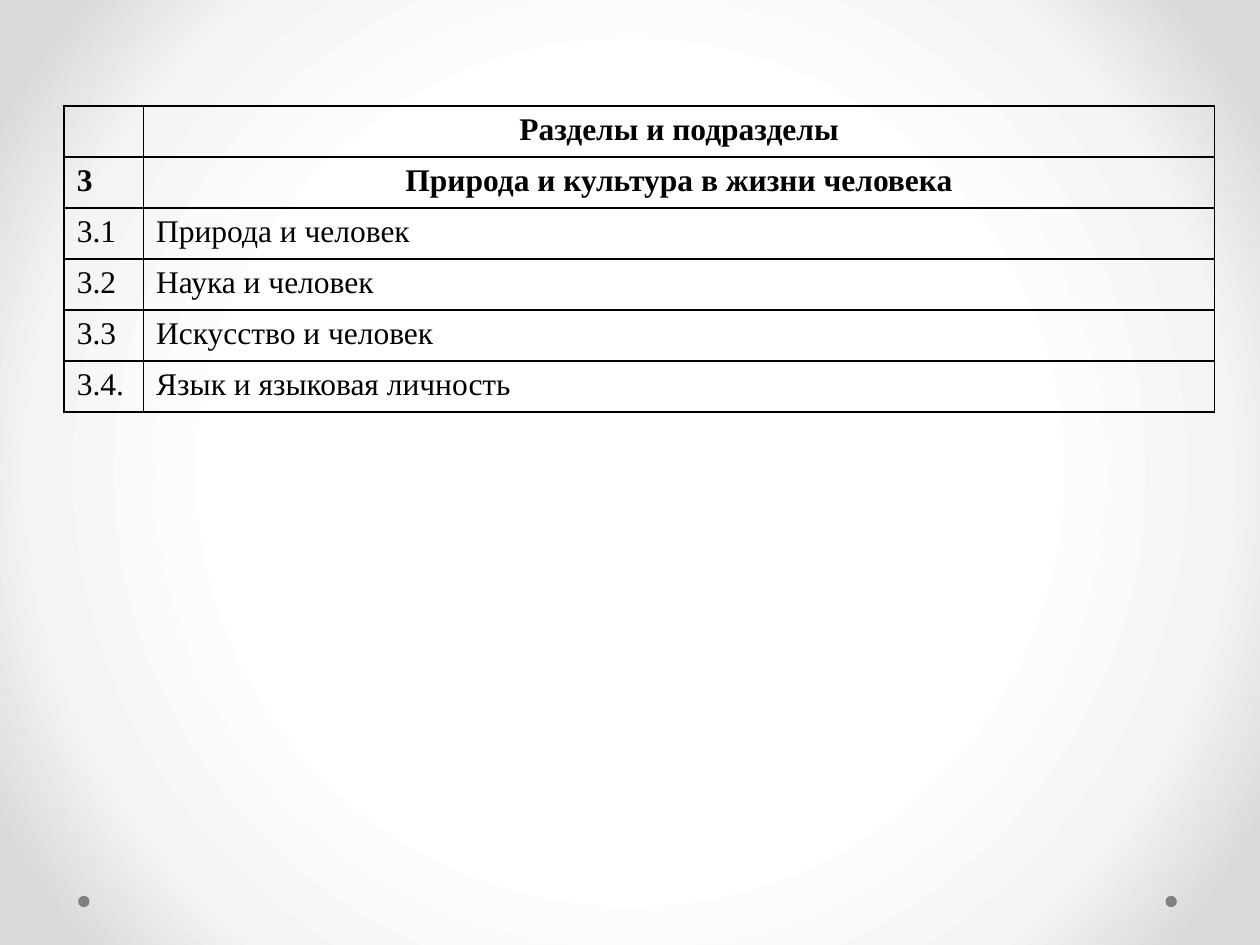
from lxml import etree
from pptx import Presentation
from pptx.dml.color import RGBColor
from pptx.enum.shapes import MSO_SHAPE
from pptx.enum.text import PP_ALIGN
from pptx.oxml import parse_xml
from pptx.oxml.ns import nsdecls, qn
from pptx.util import Inches, Pt

OVAL = MSO_SHAPE.OVAL
LEFT, CENTER = PP_ALIGN.LEFT, PP_ALIGN.CENTER

COLORS = {"ink": "000000", "dot": "808080", "center": "FFFFFF", "ring": "F4F4F4", "edge": "DADADA"}
GRADIENT = [(50, "center"), (76, "ring"), (92, "edge")]
WIDTH, HEIGHT = Inches(10), Inches(7.5)
SECTIONS = [
    ("", "Разделы и подразделы"),
    ("3", "Природа и культура в жизни человека"),
    ("3.1", "Природа и человек"),
    ("3.2", "Наука и человек"),
    ("3.3", "Искусство и человек"),
    ("3.4.", "Язык и языковая личность"),
]
HEADING_ROWS = 2
NUMBER_SHARE = 0.069
FONT = {"name": "Times New Roman", "size": Pt(18)}
TABLE_FLAGS = {"first_row": False, "horz_banding": False}


def paint_background(slide):
    """Fill the slide with a round gradient that darkens towards the corners."""
    stops = "".join(
        f'<a:gs pos="{share * 1000}"><a:srgbClr val="{COLORS[key]}"/></a:gs>'
        for share, key in GRADIENT
    )
    background = parse_xml(
        f'<p:bg {nsdecls("p", "a")}><p:bgPr><a:gradFill rotWithShape="1">'
        f'<a:gsLst>{stops}</a:gsLst><a:path path="circle">'
        '<a:fillToRect l="50000" t="50000" r="50000" b="50000"/></a:path>'
        "</a:gradFill><a:effectLst/></p:bgPr></p:bg>"
    )
    slide.element.cSld.insert(0, background)


def add_footer_dots(slide, left, top, width, size):
    """Place one dot at each end of the footer box."""
    for dot_left in (left, left + width - size):
        dot = slide.shapes.add_shape(OVAL, dot_left, top, size, size)
        dot.shadow.inherit = False
        dot.fill.solid()
        dot.fill.fore_color.rgb = RGBColor.from_string(COLORS["dot"])
        dot.line.fill.background()


def outline_cell(cell):
    """Draw a thin line on all four sides of a cell."""
    properties = cell._tc.get_or_add_tcPr()
    for position, side in enumerate(("lnL", "lnR", "lnT", "lnB")):
        border = etree.Element(qn(f"a:{side}"), w=str(Pt(1)))
        fill = etree.SubElement(border, qn("a:solidFill"))
        etree.SubElement(fill, qn("a:srgbClr"), val=COLORS["ink"])
        properties.insert(position, border)


def write_cell(cell, text, bold, alignment):
    """Write and format the text of one unfilled, outlined cell."""
    cell.fill.background()
    outline_cell(cell)
    cell.text = text
    paragraph = cell.text_frame.paragraphs[0]
    paragraph.alignment = alignment
    for run in paragraph.runs:
        for attribute, value in {**FONT, "bold": bold}.items():
            setattr(run.font, attribute, value)
        run.font.color.rgb = RGBColor.from_string(COLORS["ink"])


def add_sections_table(slide, left, top, width, height):
    """Fill the box with the numbered list of sections."""
    frame = slide.shapes.add_table(len(SECTIONS), 2, left, top, width, height)
    table = frame.table
    for attribute, value in TABLE_FLAGS.items():
        setattr(table, attribute, value)
    number_width = int(width * NUMBER_SHARE)
    table.columns[0].width = number_width
    table.columns[1].width = width - number_width
    for row, (number, title) in enumerate(SECTIONS):
        heading = row < HEADING_ROWS
        write_cell(table.cell(row, 0), number, heading, LEFT)
        write_cell(table.cell(row, 1), title, heading, CENTER if heading else LEFT)


def main():
    """Build the slide and save it."""
    presentation = Presentation()
    presentation.slide_width, presentation.slide_height = WIDTH, HEIGHT
    slide = presentation.slides.add_slide(presentation.slide_layouts[6])
    paint_background(slide)
    add_footer_dots(slide, Inches(0.62), Inches(7.11), Inches(8.72), Inches(0.09))
    add_sections_table(slide, Inches(0.51), Inches(0.84), Inches(9.13), Inches(2.43))
    presentation.save("out.pptx")


if __name__ == "__main__":
    main()
